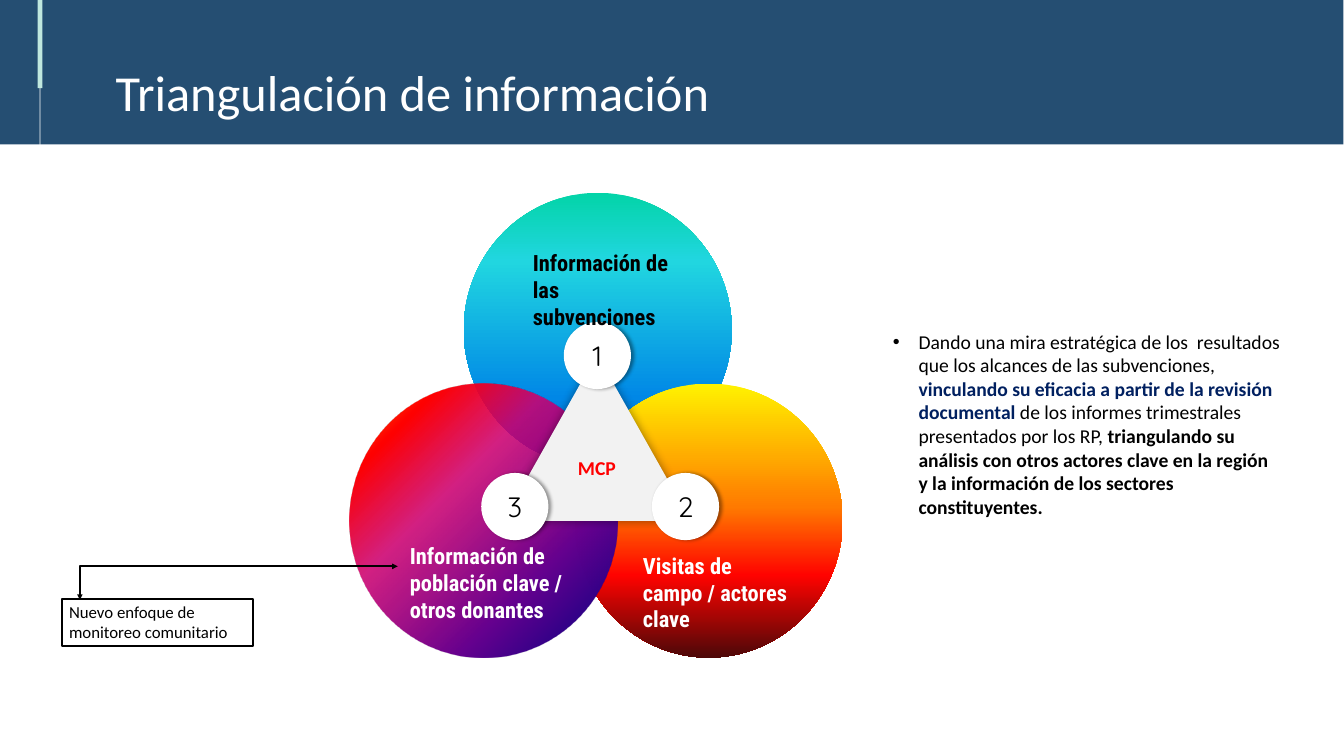
from dataclasses import dataclass

from lxml import etree
from pptx import Presentation
from pptx.dml.color import RGBColor
from pptx.enum.shapes import MSO_CONNECTOR as Connector, MSO_SHAPE as Shape
from pptx.enum.text import MSO_ANCHOR as Anchor, PP_ALIGN as Align
from pptx.oxml.ns import qn
from pptx.util import Cm, Pt


@dataclass(frozen=True)
class Theme:
    font: str = "Calibri"
    number_font: str = "Quicksand"
    label_font: str = "Roboto Condensed"
    title_size: int = 54
    number_size: int = 30
    label_size: int = 24
    body_size: int = 21
    note_size: int = 18
    white: str = "FFFFFF"
    black: str = "000000"
    navy: str = "002060"
    red: str = "FF0000"
    band: str = "254E72"
    mint: str = "C0E8DF"
    panel: str = "F2F2F2"
    cool: tuple = ((0, "03D4A8"), (25, "21D6E0"), (75, "0087E6"), (100, "005CBF"))
    warm: tuple = ((0, "FFF200"), (45, "FF7A00"), (70, "FF0300"), (100, "4D0808"))
    violet: tuple = ((0, "000082"), (30, "66008F"), (62, "CD0071", 87),
                     (83, "FF0000"), (100, "FF8200"))


THEME = Theme()


def add_child(parent, tag, **attributes):
    child = etree.SubElement(parent, qn(tag))
    for name, value in attributes.items():
        child.set(name, str(value))
    return child


def add_color(parent, color, opacity=100):
    node = add_child(parent, "a:srgbClr", val=color)
    if opacity < 100:
        add_child(node, "a:alpha", val=opacity * 1000)


def add_block(slide, kind, box, fill, line=None):
    shape = slide.shapes.add_shape(kind, *map(Cm, box))
    shape.shadow.inherit = False
    shape.fill.solid()
    shape.fill.fore_color.rgb = RGBColor.from_string(fill)
    if line:
        shape.line.color.rgb = RGBColor.from_string(line)
        shape.line.width = Pt(2)
    else:
        shape.line.fill.background()
    return shape


def add_shadow(shape, blur, distance):
    effects = shape._element.spPr.find(qn("a:effectLst"))
    shadow = add_child(effects, "a:outerShdw", blurRad=Pt(blur), dist=Pt(distance),
                       dir=0, algn="ctr", rotWithShape=0)
    add_color(shadow, THEME.black, 40)


def add_gradient_circle(slide, left, top, stops, radial=False):
    shape = add_block(slide, Shape.OVAL, (left, top, 10.13, 10.36), THEME.white)
    properties = shape._element.spPr
    gradient = etree.Element(qn("a:gradFill"), rotWithShape="1")
    stop_list = add_child(gradient, "a:gsLst")
    for position, *color in stops:
        add_color(add_child(stop_list, "a:gs", pos=position * 1000), *color)
    if radial:
        focus = add_child(gradient, "a:path", path="circle")
        add_child(focus, "a:fillToRect", l=100000, t=100000)
    else:
        add_child(gradient, "a:lin", ang=90 * 60000, scaled=0)
    properties.replace(properties.find(qn("a:solidFill")), gradient)


def write_text(shape, runs, size, font=THEME.font, align=Align.LEFT,
               anchor=Anchor.TOP, insets=(0.25, 0.13, 0.25, 0.13)):
    frame = shape.text_frame
    frame.word_wrap = True
    frame.vertical_anchor = anchor
    (frame.margin_left, frame.margin_top,
     frame.margin_right, frame.margin_bottom) = map(Cm, insets)
    paragraph = frame.paragraphs[0]
    paragraph.alignment = align
    for text, color, bold in runs:
        run = paragraph.add_run()
        run.text = text
        run.font.name = font
        run.font.size = Pt(size)
        run.font.bold = bold
        run.font.color.rgb = RGBColor.from_string(color)
    return paragraph


def add_text(slide, box, runs, size, **options):
    return write_text(slide.shapes.add_textbox(*map(Cm, box)), runs, size, **options)


def add_bullet(paragraph, indent):
    properties = paragraph._p.get_or_add_pPr()
    properties.set("marL", str(Cm(indent)))
    properties.set("indent", str(-Cm(indent)))
    add_child(properties, "a:buFont", typeface="Arial")
    add_child(properties, "a:buChar", char="•")


def add_badge(slide, left, top, number):
    badge = add_block(slide, Shape.OVAL, (left, top, 2.54, 2.54), THEME.white)
    add_shadow(badge, 4, 3)
    write_text(badge, [(number, THEME.black, False)], THEME.number_size,
               font=THEME.number_font, align=Align.CENTER, anchor=Anchor.MIDDLE)


def add_double_arrow(slide, start, end):
    arrow = slide.shapes.add_connector(Connector.ELBOW, *map(Cm, start + end))
    arrow.line.color.rgb = RGBColor.from_string(THEME.black)
    arrow.line.width = Pt(2)
    properties = arrow._element.spPr
    properties.find(qn("a:prstGeom")).set("prst", "bentConnector2")
    line = properties.find(qn("a:ln"))
    for tag in ("a:headEnd", "a:tailEnd"):
        add_child(line, tag, type="triangle")
    add_child(properties, "a:effectLst")


def add_triangle(slide):
    triangle = add_block(slide, Shape.ISOSCELES_TRIANGLE,
                         (19.02, 13.39, 7.09, 6.3), THEME.panel)
    add_shadow(triangle, 10, 0)
    write_text(triangle, [("MCP", THEME.red, True)], THEME.body_size,
               align=Align.CENTER, anchor=Anchor.MIDDLE, insets=(0.25, 0.13, 0.25, 1.02))


def add_body(slide):
    paragraph = add_text(slide, (33.5, 12.34, 15.16, 7.44), [
        ("Dando una mira estratégica de los  resultados que los alcances "
         "de las subvenciones, ", THEME.black, False),
        ("vinculando su eficacia a partir de la revisión documental ", THEME.navy, True),
        ("de los informes trimestrales presentados por los RP, ", THEME.black, False),
        ("triangulando su análisis con otros actores clave en la región  y la "
         "información de los sectores constituyentes.", THEME.black, True),
    ], THEME.body_size)
    add_bullet(paragraph, 0.97)


def main():
    presentation = Presentation()
    presentation.slide_width = Cm(50.8)
    presentation.slide_height = Cm(28.58)
    slide = presentation.slides.add_slide(presentation.slide_layouts[6])

    add_block(slide, Shape.RECTANGLE, (0, -0.1, 50.78, 5.56), THEME.band)
    add_gradient_circle(slide, 17.53, 7.29, THEME.cool)
    add_gradient_circle(slide, 21.72, 14.5, THEME.warm)
    add_gradient_circle(slide, 13.21, 14.5, THEME.violet, radial=True)

    add_text(slide, (3.99, 1.85, 30.2, 3.2),
             [("Triangulación de información", THEME.white, False)], THEME.title_size,
             anchor=Anchor.MIDDLE, insets=(0.38, 0.18, 0.38, 0.18))
    add_body(slide)
    add_triangle(slide)

    for left, top, number in ((21.31, 12.17, "1"), (18.19, 17.88, "3"), (24.64, 17.88, "2")):
        add_badge(slide, left, top, number)

    labels = (
        ((19.89, 9.3, 6.25, 2.31), "Información de las subvenciones", THEME.black),
        ((24.05, 20.73, 6.25, 2.31), "Visitas de campo / actores clave", THEME.white),
        ((15.24, 20.37, 7.09, 3.33), "Información de población clave / otros donantes",
         THEME.white),
    )
    for box, text, color in labels:
        add_text(slide, box, [(text, color, True)], THEME.label_size, font=THEME.label_font)

    note = add_block(slide, Shape.RECTANGLE, (2.36, 22.63, 7.19, 1.8), THEME.white, THEME.black)
    write_text(note, [("Nuevo enfoque de monitoreo comunitario", THEME.black, False)],
               THEME.note_size)
    add_double_arrow(slide, (15.04, 21.41), (3.02, 22.68))

    add_block(slide, Shape.RECTANGLE, (1.5, 2.77, 0.03, 25.7), THEME.white)
    add_block(slide, Shape.RECTANGLE, (1.42, -0.1, 0.18, 3.43), THEME.mint)

    presentation.save("out.pptx")


if __name__ == "__main__":
    main()
